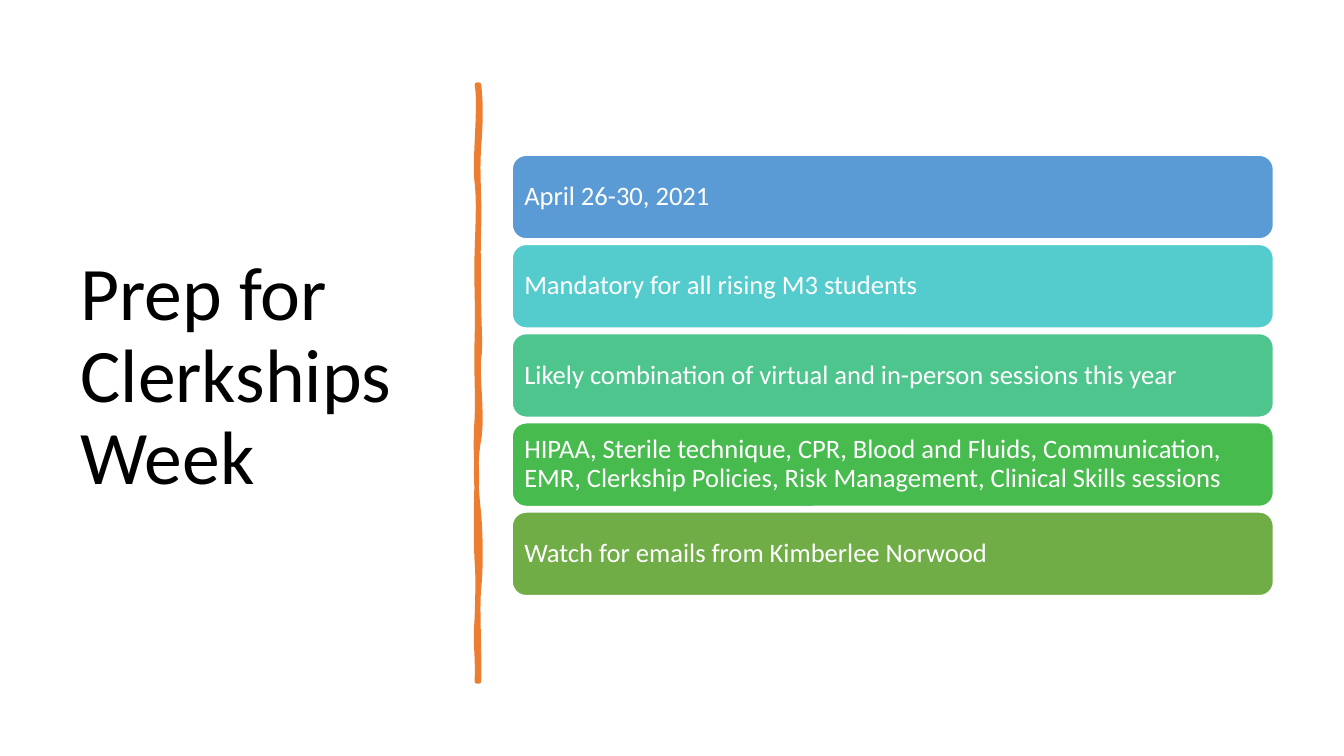
from lxml.etree import SubElement
from pptx import Presentation
from pptx.dml.color import RGBColor
from pptx.enum.shapes import MSO_SHAPE
from pptx.enum.text import MSO_ANCHOR, PP_ALIGN
from pptx.oxml.ns import qn
from pptx.util import Pt

PX = 9144
BLACK = RGBColor(0x00, 0x00, 0x00)
WHITE = RGBColor(0xFF, 0xFF, 0xFF)
ORANGE = RGBColor(0xED, 0x7D, 0x31)
BLUE = RGBColor(0x5B, 0x9B, 0xD5)
TURQUOISE = RGBColor(0x54, 0xCC, 0xCD)
MINT = RGBColor(0x4D, 0xC5, 0x8D)
GREEN = RGBColor(0x48, 0xBB, 0x4F)
OLIVE = RGBColor(0x70, 0xAD, 0x47)

TOPICS = [
    ("April 26-30, 2021", BLUE),
    ("Mandatory for all rising M3 students", TURQUOISE),
    ("Likely combination of virtual and in-person sessions this year", MINT),
    ("HIPAA, Sterile technique, CPR, Blood and Fluids, Communication, "
     "EMR, Clerkship Policies, Risk Management, Clinical Skills sessions", GREEN),
    ("Watch for emails from Kimberlee Norwood", OLIVE),
]

STROKE_START = (2, 0)
STROKE_CURVES = [
    ((4, 18), (4, 35), (2, 62)), ((0, 89), (3, 111), (2, 142)),
    ((1, 173), (2, 178), (2, 210)), ((2, 241), (4, 258), (2, 272)),
    ((0, 286), (6, 330), (2, 352)), ((-2, 373), (-1, 400), (2, 426)),
    ((4, 452), (4, 480), (2, 500)), ((0, 519), (3, 566), (2, 592)),
    ((1, 592), (0, 592), (0, 592)), ((1, 562), (-2, 560), (0, 529)),
    ((1, 499), (1, 486), (0, 473)), ((-1, 460), (-1, 411), (0, 393)),
    ((0, 375), (-2, 361), (0, 331)), ((1, 302), (-1, 289), (0, 251)),
    ((1, 214), (-1, 197), (0, 166)), ((1, 134), (2, 116), (0, 97)),
    ((-3, 79), (4, 20), (0, 0)), ((1, 0), (1, 0), (2, 0)),
]


def write_text(shape, text, size, color, inset, line_spacing=0.9):
    """Fill a shape with one left-aligned, vertically centred paragraph."""
    frame = shape.text_frame
    frame.word_wrap = True
    frame.vertical_anchor = MSO_ANCHOR.MIDDLE
    frame.margin_left = frame.margin_right = inset * PX
    frame.margin_top = frame.margin_bottom = 5 * PX
    paragraph = frame.paragraphs[0]
    paragraph.alignment = PP_ALIGN.LEFT
    paragraph.line_spacing = line_spacing
    run = paragraph.add_run()
    run.text = text
    run.font.name = "Calibri"
    run.font.size = Pt(size)
    run.font.color.rgb = color


def add_title(slide, left, top, width, height):
    """Place the slide title in its box."""
    title = slide.shapes.add_textbox(left * PX, top * PX, width * PX, height * PX)
    write_text(title, "Prep for Clerkships Week", size=54, color=BLACK, inset=10)


def bend_segments(freeform, curves):
    """Turn the straight segments of a freeform into cubic curves."""
    segments = list(freeform.element.iter(qn("a:lnTo")))
    for segment, curve in zip(segments, curves):
        segment.tag = qn("a:cubicBezTo")
        segment.remove(segment[0])
        for x, y in curve:
            SubElement(segment, qn("a:pt"), x=str(x * PX), y=str(y * PX))


def add_divider(slide, left, top):
    """Draw the hand-drawn vertical stroke from its top left corner."""
    start_x, start_y = STROKE_START
    builder = slide.shapes.build_freeform((left + start_x) * PX, (top + start_y) * PX)
    builder.add_line_segments(
        [((left + x) * PX, (top + y) * PX) for _, _, (x, y) in STROKE_CURVES])
    stroke = builder.convert_to_shape()
    bend_segments(stroke, STROKE_CURVES)
    stroke.shadow.inherit = False
    stroke.fill.solid()
    stroke.fill.fore_color.rgb = ORANGE
    stroke.line.color.rgb = ORANGE
    stroke.line.width = Pt(3.25)
    outline = stroke.element.spPr.find(qn("a:ln"))
    SubElement(outline, qn("a:round"))


def add_topics(slide, left, top, width, height, bar_height=83):
    """Stack the topic bars evenly over the height of the box."""
    pitch = (height - bar_height) / (len(TOPICS) - 1)
    for index, (topic, color) in enumerate(TOPICS):
        bar = slide.shapes.add_shape(
            MSO_SHAPE.ROUNDED_RECTANGLE, left * PX, round((top + index * pitch) * PX),
            width * PX, bar_height * PX)
        bar.shadow.inherit = False
        bar.fill.solid()
        bar.fill.fore_color.rgb = color
        bar.line.color.rgb = WHITE
        bar.line.width = Pt(1)
        write_text(bar, topic, size=19, color=WHITE, inset=8)


def main():
    """Build and save the presentation."""
    presentation = Presentation()
    presentation.slide_width = 1333 * PX
    presentation.slide_height = 750 * PX
    slide = presentation.slides.add_slide(presentation.slide_layouts[6])
    add_title(slide, 70, 70, 374, 610)
    add_divider(slide, 473, 84)
    add_topics(slide, 508, 154, 755, 437)
    presentation.save("out.pptx")


if __name__ == "__main__":
    main()
